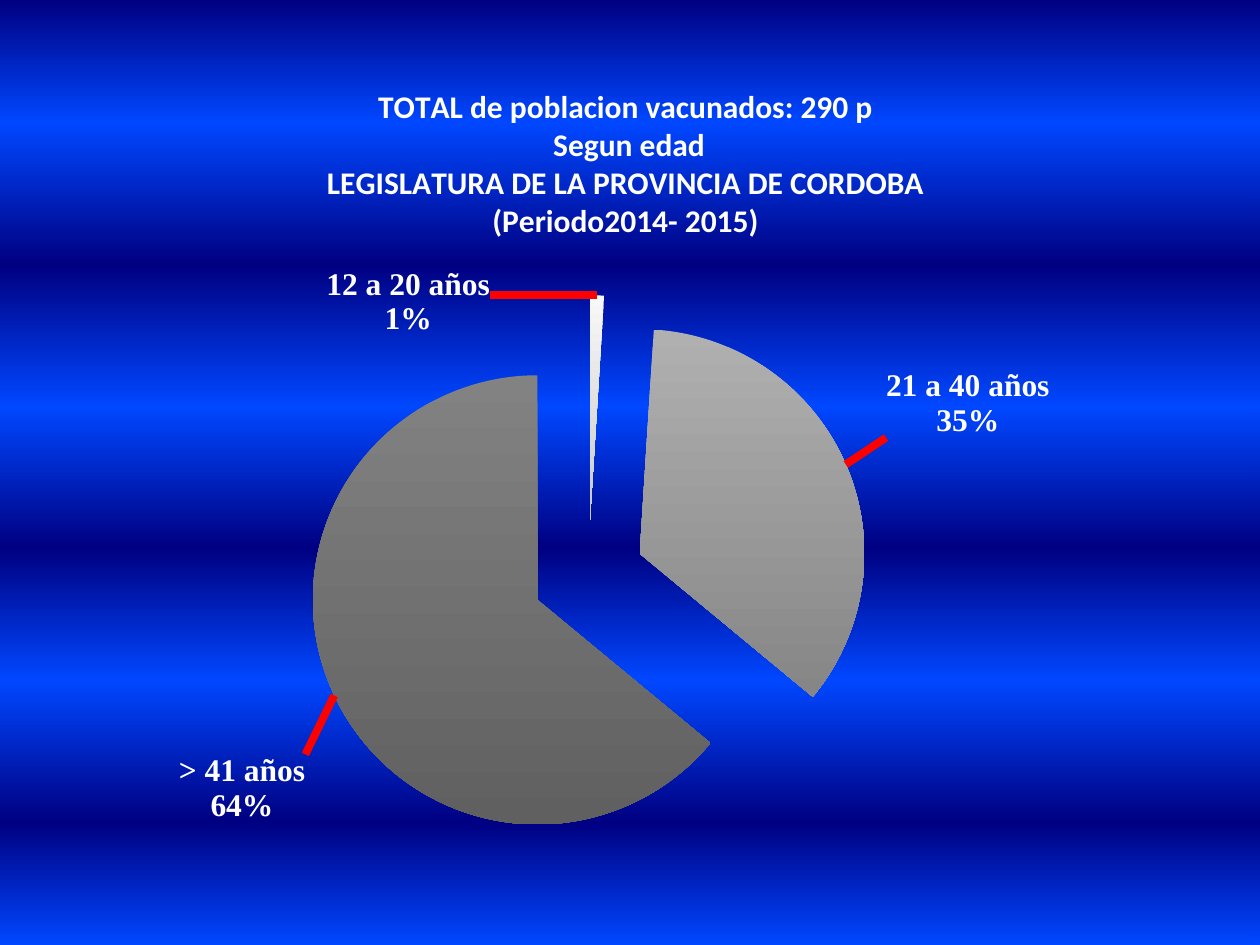
from dataclasses import dataclass

from lxml import etree
from pptx import Presentation
from pptx.chart.data import CategoryChartData
from pptx.dml.color import RGBColor
from pptx.enum.chart import XL_CHART_TYPE as ChartType, XL_LABEL_POSITION as LabelPos
from pptx.oxml import parse_xml
from pptx.oxml.ns import nsdecls, qn
from pptx.util import Inches, Pt


@dataclass(frozen=True)
class Theme:
    text: str = "FFFFFF"
    leader: str = "FF0000"
    navy: str = "000082"
    blue: str = "0047FF"
    title_font: str = "Calibri"
    label_font: str = "Times New Roman"
    base_size: int = 10
    size: int = 18
    leader_width: float = 4.5


THEME = Theme()
BAND_STOPS = (0, 13, 28, 43, 58, 72, 87, 100)
TITLE = ("TOTAL de poblacion vacunados: 290 p", " Segun edad",
         "LEGISLATURA DE LA PROVINCIA DE CORDOBA", "(Periodo2014- 2015)")
# category, percent, label lines, label offset, gradient from top to bottom
AGE_GROUPS = (
    ("12 A 20 AÑOS", 1, ("12 a 20 años", "1%"), (-0.17, 0.06), ("F8F8F8", "C8C8C8")),
    ("21 A 40 AÑOS", 35, ("21 a 40 años", "35%"), (0.03, -0.03), ("B0B0B0", "868686")),
    ("41 Y MÁS AÑOS", 64, ("> 41 años", "64%"), (-0.02, 0.07), ("828282", "606060")),
)


def set_gradient(fill, stops, angle=90):
    """Fill with (percent, colour) stops, the angle running clockwise."""
    fill.gradient()
    fill.gradient_angle = 360 - angle
    gs_list = fill.gradient_stops[0]._gs.getparent()
    for gs in list(gs_list):
        gs_list.remove(gs)
    for percent, color in stops:
        gs = etree.SubElement(gs_list, qn("a:gs"), pos=str(percent * 1000))
        etree.SubElement(gs, qn("a:srgbClr"), val=color)


def style_font(font, name, size, bold=True):
    font.name, font.size, font.bold = name, Pt(size), bold
    font.color.rgb = RGBColor.from_string(THEME.text)


def write_lines(tf, lines, font_name):
    tf.text = "\n".join(lines)
    for p in tf.paragraphs:
        for r in p.runs:
            style_font(r.font, font_name, THEME.size)


def manual_layout(x, y, w=None, h=None):
    """Offset a label, or place the inner plot area when a size is given."""
    parts = []
    if w is not None:
        parts = [("layoutTarget", "inner"), ("xMode", "edge"), ("yMode", "edge")]
    parts += [("x", x), ("y", y)]
    if w is not None:
        parts += [("w", w), ("h", h)]
    body = "".join(f'<c:{tag} val="{val}"/>' for tag, val in parts)
    return parse_xml(f'<c:layout {nsdecls("c")}><c:manualLayout>{body}'
                     "</c:manualLayout></c:layout>")


def add_background(s):
    colors = (THEME.navy, THEME.blue) * (len(BAND_STOPS) // 2)
    set_gradient(s.background.fill, zip(BAND_STOPS, colors))


def style_slice(point, lines, offset, colors):
    set_gradient(point.format.fill, zip((0, 100), colors))
    label = point.data_label
    write_lines(label.text_frame, lines, THEME.label_font)
    label.position = LabelPos.OUTSIDE_END
    d_lbl = label._dLbl
    d_lbl.find(qn("c:idx")).addnext(manual_layout(*offset))
    for tag in ("c:showCatName", "c:showPercent"):
        d_lbl.find(qn(tag)).set("val", "1")
    d_lbl.find(qn("c:showVal")).set("val", "0")


def add_leader_lines(labels):
    d_lbls = labels._element
    for old in d_lbls.findall(qn("c:showLeaderLines")):
        d_lbls.remove(old)
    etree.SubElement(d_lbls, qn("c:showLeaderLines"), val="1")
    d_lbls.append(parse_xml(
        f'<c:leaderLines {nsdecls("c", "a")}><c:spPr><a:ln w="{Pt(THEME.leader_width)}">'
        f'<a:solidFill><a:srgbClr val="{THEME.leader}"/></a:solidFill></a:ln></c:spPr>'
        "</c:leaderLines>"))


def add_age_pie(s, x, y, w, h):
    data = CategoryChartData()
    data.categories = [group[0] for group in AGE_GROUPS]
    data.add_series("Series 1", [group[1] for group in AGE_GROUPS])
    chart = s.shapes.add_chart(ChartType.PIE, x, y, w, h, data).chart
    style_font(chart.font, THEME.title_font, THEME.base_size, False)
    chart.has_legend = False
    write_lines(chart.chart_title.text_frame, TITLE, THEME.title_font)
    chart.chart_title.include_in_layout = False

    plot = chart.plots[0]
    plot.vary_by_categories = True
    plot_area = plot._element.getparent()
    for old in plot_area.findall(qn("c:layout")):
        plot_area.remove(old)
    plot_area.insert(0, manual_layout(0.214, 0.296, 0.505, 0.704))

    series = plot.series[0]
    series.format.line.fill.background()
    explosion = parse_xml(f'<c:explosion {nsdecls("c")} val="25"/>')
    series._element.find(qn("c:spPr")).addnext(explosion)
    labels = series.data_labels
    style_font(labels.font, THEME.label_font, THEME.size)
    labels.show_value = False
    labels.show_category_name = labels.show_percentage = True
    labels.position = LabelPos.OUTSIDE_END
    for i, (_, _, lines, offset, colors) in enumerate(AGE_GROUPS):
        style_slice(series.points[i], lines, offset, colors)
    add_leader_lines(labels)


def main():
    prs = Presentation()
    prs.slide_width, prs.slide_height = Inches(10), Inches(7.5)
    s = prs.slides.add_slide(prs.slide_layouts[6])
    add_background(s)
    add_age_pie(s, Inches(0.55), Inches(0.47), Inches(8.83), Inches(6.33))
    prs.save("out.pptx")


if __name__ == "__main__":
    main()
